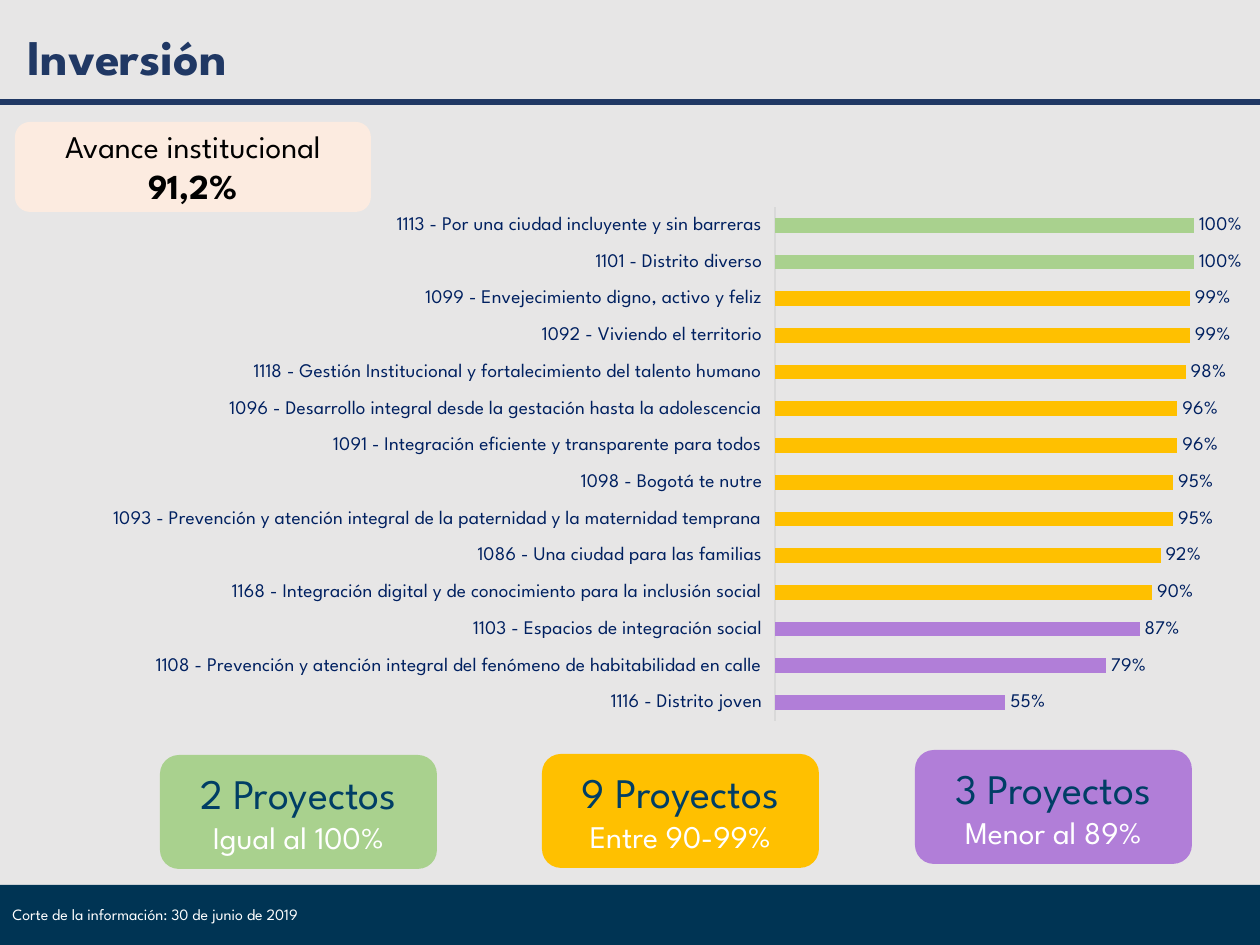
from lxml.etree import SubElement
from pptx import Presentation
from pptx.chart.data import CategoryChartData
from pptx.dml.color import RGBColor
from pptx.enum.chart import XL_CHART_TYPE, XL_LABEL_POSITION, XL_TICK_LABEL_POSITION, XL_TICK_MARK
from pptx.enum.shapes import MSO_CONNECTOR, MSO_SHAPE
from pptx.enum.text import MSO_ANCHOR, PP_ALIGN
from pptx.oxml import parse_xml
from pptx.oxml.ns import nsdecls, qn
from pptx.util import Emu, Pt

PX = 914400 // 126
FONT = "League Spartan"
COLORS = {
    "background": "E7E6E6", "footer": "003454", "title": "203864", "label": "002060",
    "axis": "D9D9D9", "card_title": "003E65", "white": "FFFFFF", "black": "000000",
    "summary": "FCEBE0", "green": "A9D18E", "yellow": "FFC000", "purple": "B17ED8",
}

# Content
TITLE = "Inversión"
FOOTER = "Corte de la información: 30 de junio de 2019"
SUMMARY = ("Avance institucional ", "91,2%")
PROJECTS = [  # bottom bar first
    ("1116 - Distrito joven", 0.55),
    ("1108 - Prevención y atención integral del fenómeno de habitabilidad en calle", 0.79),
    ("1103 - Espacios de integración social", 0.87),
    ("1168 - Integración digital y de conocimiento para la inclusión social", 0.90),
    ("1086 - Una ciudad para las familias", 0.92),
    ("1093 - Prevención y atención integral de la paternidad y la maternidad temprana", 0.95),
    ("1098 - Bogotá te nutre", 0.95),
    ("1091 - Integración eficiente y transparente para todos", 0.96),
    ("1096 - Desarrollo integral desde la gestación hasta la adolescencia", 0.96),
    ("1118 - Gestión Institucional y fortalecimiento del talento humano", 0.98),
    ("1092 - Viviendo el territorio", 0.99),
    ("1099 - Envejecimiento digno, activo y feliz", 0.99),
    ("1101 - Distrito diverso", 1),
    ("1113 - Por una ciudad incluyente y sin barreras", 1),
]
CARDS = [  # left, top, color, heading, range
    (160, 755, "green", "2 Proyectos", "Igual al 100%"),
    (542, 754, "yellow", "9 Proyectos", "Entre 90-99%"),
    (915, 750, "purple", "3 Proyectos", "Menor al 89%"),
]
CHART_BOX = (96, 197, 1206, 535)
PLOT_BOX = (775, 207, 503, 514)
AXIS_MAXIMUM = 1.2


def px(*lengths):
    return [Emu(length * PX) for length in lengths]


def rgb(name):
    return RGBColor.from_string(COLORS[name])


def style_font(font, size, color, bold=False):
    font.name, font.size, font.bold = FONT, Pt(size), bold
    font.color.rgb = rgb(color)


def add_block(slide, kind, box, color):
    shape = slide.shapes.add_shape(kind, *px(*box))
    shape.shadow.inherit = False
    shape.fill.solid()
    shape.fill.fore_color.rgb = rgb(color)
    shape.line.fill.background()
    shape.text_frame.word_wrap = True
    shape.text_frame.vertical_anchor = MSO_ANCHOR.MIDDLE
    return shape


def add_label(slide, box, text, size, color, bold=False):
    text_frame = slide.shapes.add_textbox(*px(*box)).text_frame
    text_frame.word_wrap = True
    text_frame.text = text
    style_font(text_frame.paragraphs[0].runs[0].font, size, color, bold)
    return text_frame


def rating(value):
    return "green" if value >= 1 else "yellow" if value >= 0.9 else "purple"


def add_project_chart(slide):
    data = CategoryChartData(number_format="0%")
    data.categories = [name for name, _ in PROJECTS]
    data.add_series("Series 1", [value for _, value in PROJECTS])
    chart = slide.shapes.add_chart(XL_CHART_TYPE.BAR_CLUSTERED, *px(*CHART_BOX), data).chart
    style_font(chart.font, 11, "black")
    chart.has_legend = chart.has_title = False

    # Axes
    axis = chart.category_axis
    axis.major_tick_mark = axis.minor_tick_mark = XL_TICK_MARK.NONE
    axis.tick_label_position = XL_TICK_LABEL_POSITION.LOW
    axis.format.line.color.rgb = rgb("axis")
    axis.format.line.width = Pt(0.75)
    style_font(axis.tick_labels.font, 11, "label")
    chart.value_axis.minimum_scale, chart.value_axis.maximum_scale = 0, AXIS_MAXIMUM
    chart.value_axis.has_major_gridlines = False
    chart.value_axis.visible = False

    # Bars and their values
    plot = chart.plots[0]
    plot.gap_width, plot.overlap, plot.vary_by_categories = 150, -25, False
    for index, (_, value) in enumerate(PROJECTS):
        fill = plot.series[0].points[index].format.fill
        fill.solid()
        fill.fore_color.rgb = rgb(rating(value))
    plot.has_data_labels = True
    labels = plot.data_labels
    labels.show_value = True
    labels.number_format, labels.number_format_is_linked = "0%", False
    labels.position = XL_LABEL_POSITION.OUTSIDE_END
    style_font(labels.font, 11, "label")

    # Fixed inner plot area, as fractions of the chart
    left, top, width, height = CHART_BOX
    fractions = {"x": (PLOT_BOX[0] - left) / width, "y": (PLOT_BOX[1] - top) / height,
                 "w": PLOT_BOX[2] / width, "h": PLOT_BOX[3] / height}
    settings = '<c:layoutTarget val="inner"/><c:xMode val="edge"/><c:yMode val="edge"/>'
    settings += "".join(f'<c:{key} val="{value:.4f}"/>' for key, value in fractions.items())
    plot_area = chart.plots[0]._element.getparent()
    for layout in plot_area.findall(qn("c:layout")):
        plot_area.remove(layout)
    plot_area.insert(0, parse_xml(
        f'<c:layout {nsdecls("c")}><c:manualLayout>{settings}</c:manualLayout></c:layout>'))


def main():
    presentation = Presentation()
    presentation.slide_width, presentation.slide_height = px(1260, 945)
    slide = presentation.slides.add_slide(presentation.slide_layouts[6])
    slide.background.fill.solid()
    slide.background.fill.fore_color.rgb = rgb("background")

    # Footer band and header rule
    add_block(slide, MSO_SHAPE.RECTANGLE, (0, 885, 1260, 60), "footer")
    rule = slide.shapes.add_connector(MSO_CONNECTOR.STRAIGHT, *px(0, 102, 1260, 102))
    rule.line.color.rgb = rgb("title")
    rule.line.width = Pt(3)
    SubElement(rule._element.spPr, qn("a:effectLst"))

    add_project_chart(slide)

    title = add_label(slide, (15, 24, 815, 64), TITLE, 28.5, "title", bold=True)
    title.vertical_anchor = MSO_ANCHOR.MIDDLE

    # Cards counting the projects in each range
    for left, top, color, heading, bounds in CARDS:
        card = add_block(slide, MSO_SHAPE.ROUNDED_RECTANGLE, (left, top, 277, 114), color)
        card.text_frame.text = f"{heading}\n{bounds}"
        styles = [(24, "card_title"), (18, "white")]
        for paragraph, style in zip(card.text_frame.paragraphs, styles):
            paragraph.alignment = PP_ALIGN.CENTER
            style_font(paragraph.runs[0].font, *style)

    footer = add_label(slide, (0, 897, 1246, 32), FOOTER, 9, "white").paragraphs[0]
    footer.alignment = PP_ALIGN.JUSTIFY
    footer.line_spacing = 1.07

    # Overall progress
    summary = add_block(slide, MSO_SHAPE.ROUNDED_RECTANGLE, (15, 122, 356, 90), "summary")
    paragraph = summary.text_frame.paragraphs[0]
    paragraph.alignment = PP_ALIGN.CENTER
    for text, size, bold in zip(SUMMARY, (18, 20), (False, True)):
        run = paragraph.add_run()
        run.text = text
        style_font(run.font, size, "black", bold)

    presentation.save("out.pptx")


if __name__ == "__main__":
    main()
